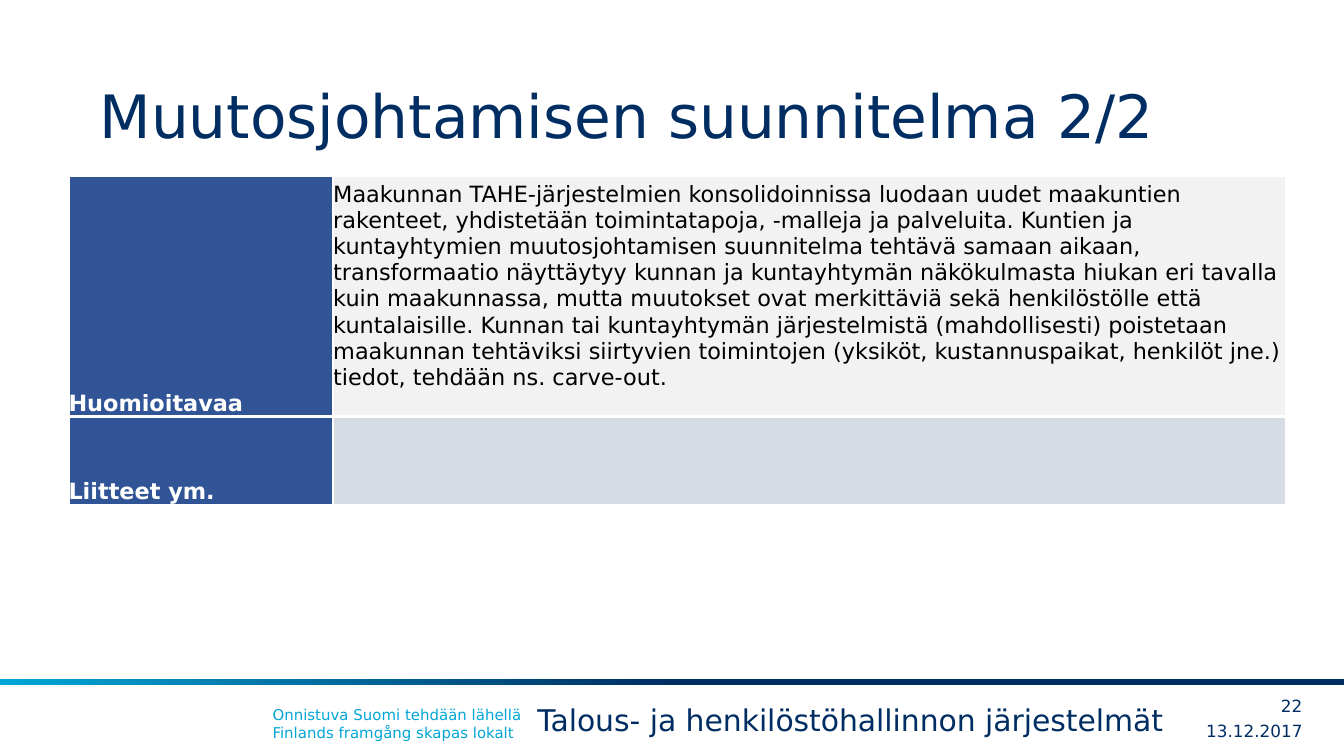
from lxml.etree import SubElement
from pptx import Presentation
from pptx.dml.color import RGBColor
from pptx.enum.shapes import MSO_SHAPE
from pptx.enum.text import MSO_ANCHOR as Anchor, PP_ALIGN as Align
from pptx.oxml.ns import qn
from pptx.util import Inches, Pt

NAVY = RGBColor(0x00, 0x2E, 0x63)
CYAN = RGBColor(0x00, 0xA6, 0xD6)
BLUE = RGBColor(0x30, 0x54, 0x96)
LIGHT_GRAY = RGBColor(0xF2, 0xF2, 0xF2)
BLUE_GRAY = RGBColor(0xD6, 0xDC, 0xE4)
BLACK = RGBColor(0x00, 0x00, 0x00)
WHITE = RGBColor(0xFF, 0xFF, 0xFF)
FONT = "DejaVu Sans"

# Widescreen slide, 16:9
presentation = Presentation()
presentation.slide_width = Inches(10)
presentation.slide_height = presentation.slide_width * 9 // 16
slide = presentation.slides.add_slide(presentation.slide_layouts[6])


def style(paragraph, size, color, bold=False):
    font = paragraph.font
    font.name, font.size, font.bold = FONT, Pt(size), bold
    font.color.rgb = color


# Footer band, fading from cyan on the left to navy in the middle
band = slide.shapes.add_shape(
    MSO_SHAPE.RECTANGLE, 0, Inches(5.05), presentation.slide_width, Inches(0.05))
band.shadow.inherit = False
band.line.fill.background()
band.fill.gradient()
band.fill.gradient_angle = 180
for stop, position, color in zip(band.fill.gradient_stops, (0.5, 1), (NAVY, CYAN)):
    stop.position = position
    stop.color.rgb = color

# Title and footer: text, box, size, colour, alignment, anchor, side and end insets
texts = [
    ("Onnistuva Suomi tehdään lähellä\vFinlands framgång skapas lokalt",
     (1.93, 5.2, 6.54, 0.37), 8, CYAN, Align.LEFT, Anchor.TOP, 0.1, 0.05),
    ("13.12.2017", (8.7, 5.33, 0.99, 0.22), 9, NAVY, Align.RIGHT, Anchor.MIDDLE, 0, 0),
    ("22", (9.26, 5.14, 0.43, 0.22), 9, NAVY, Align.RIGHT, Anchor.MIDDLE, 0, 0),
    ("Muutosjohtamisen suunnitelma 2/2",
     (0.74, 0.23, 8.51, 0.94), 32, NAVY, Align.LEFT, Anchor.BOTTOM, 0, 0.05),
    ("Talous- ja henkilöstöhallinnon järjestelmät",
     (3.9, 5.17, 5, 0.37), 16, NAVY, Align.LEFT, Anchor.TOP, 0.1, 0.05),
]
for text, box, size, color, alignment, anchor, side, end in texts:
    frame = slide.shapes.add_textbox(*map(Inches, box)).text_frame
    frame.word_wrap = True
    frame.vertical_anchor = anchor
    frame.margin_left = frame.margin_right = Inches(side)
    frame.margin_top = frame.margin_bottom = Inches(end)
    paragraph = frame.paragraphs[0]
    paragraph.text = text
    paragraph.alignment = alignment
    style(paragraph, size, color)

# Change plan table: a heading column and a content column
rows = [
    ("Huomioitavaa",
     "Maakunnan TAHE-järjestelmien konsolidoinnissa luodaan uudet maakuntien rakenteet, "
     "yhdistetään toimintatapoja, -malleja ja palveluita. Kuntien ja kuntayhtymien "
     "muutosjohtamisen suunnitelma tehtävä samaan aikaan, transformaatio näyttäytyy kunnan "
     "ja kuntayhtymän näkökulmasta hiukan eri tavalla kuin maakunnassa, mutta muutokset ovat "
     "merkittäviä sekä henkilöstölle että kuntalaisille. Kunnan tai kuntayhtymän "
     "järjestelmistä (mahdollisesti) poistetaan maakunnan tehtäviksi siirtyvien toimintojen "
     "(yksiköt, kustannuspaikat, henkilöt jne.) tiedot, tehdään ns. carve-out.",
     LIGHT_GRAY, 1.75),
    ("Liitteet ym.", "", BLUE_GRAY, 0.66),
]
table = slide.shapes.add_table(
    len(rows), 2, Inches(0.51), Inches(1.31), Inches(9.06), Inches(2.41)).table
for column, width in zip(table.columns, (1.97, 7.09)):
    column.width = Inches(width)

for row_index, (heading, content, content_fill, height) in enumerate(rows):
    table.rows[row_index].height = Inches(height)
    cells = [(heading, BLUE, WHITE, True), (content, content_fill, BLACK, False)]
    for column_index, (text, fill, color, bold) in enumerate(cells):
        cell = table.cell(row_index, column_index)
        cell.vertical_anchor = Anchor.BOTTOM
        cell.margin_left = cell.margin_right = cell.margin_top = cell.margin_bottom = 0
        cell.text = text
        style(cell.text_frame.paragraphs[0], 12, color, bold)
        properties = cell._tc.get_or_add_tcPr()
        for side in ("a:lnL", "a:lnR", "a:lnT", "a:lnB"):
            border = SubElement(properties, qn(side), w=str(Pt(1.5)))
            SubElement(SubElement(border, qn("a:solidFill")), qn("a:srgbClr"), val=str(WHITE))
        cell.fill.solid()
        cell.fill.fore_color.rgb = fill
# One line of space below the long text
table.cell(0, 1).margin_bottom = Inches(0.19)
table.rows[0].height = Inches(1.73)

presentation.save("out.pptx")
